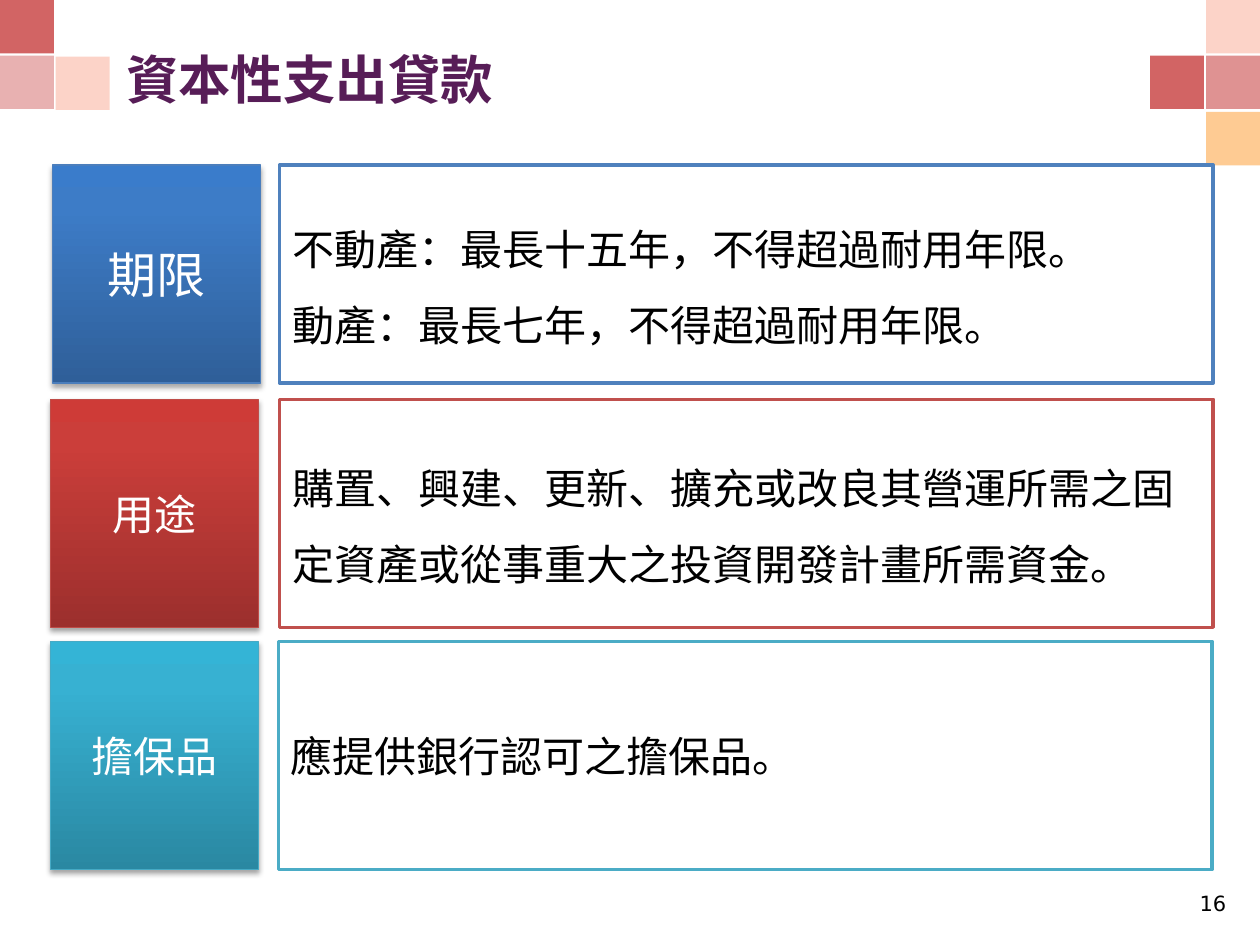
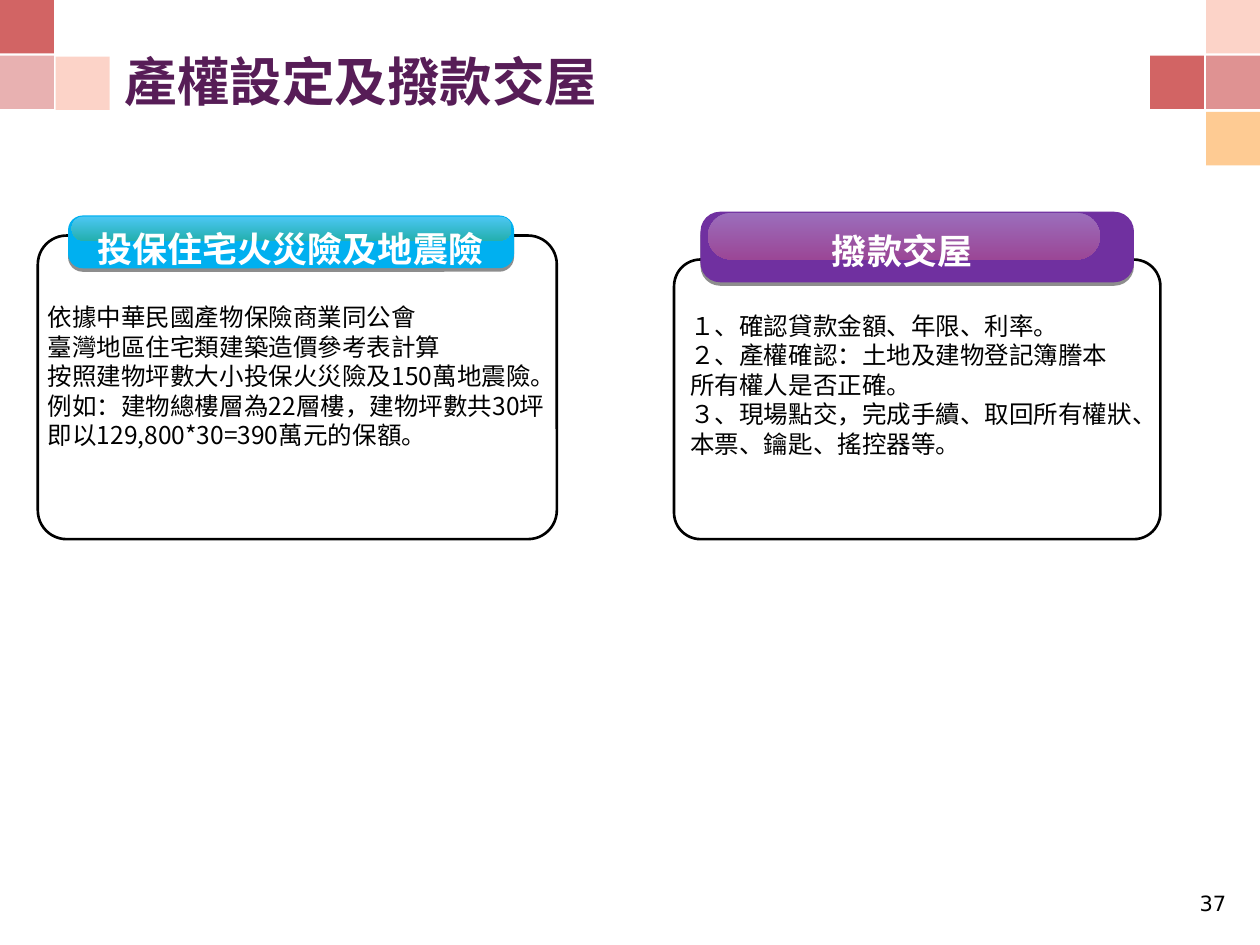
from lxml.etree import SubElement
from pptx import Presentation
from pptx.dml.color import RGBColor
from pptx.enum.shapes import MSO_SHAPE
from pptx.enum.text import MSO_ANCHOR, PP_ALIGN
from pptx.oxml.ns import qn
from pptx.util import Pt

CJK_FONT = "Noto Sans CJK SC"
NUMBER_FONT = "DejaVu Sans"
TITLE_COLOR, BLACK, WHITE = "571D57", "000000", "FFFFFF"
RED, PEACH, ORANGE = "D26464", "FBA993", "FEA94C"

# Corner squares: left, top, colour, opacity in percent
SQUARE_SIZE = (30.8, 30.5)
CORNER_SQUARES = [
    (689.2, 64, ORANGE, 60), (689.2, 0, PEACH, 50), (31.8, 32.4, PEACH, 50),
    (0, 0, RED, 100), (0, 31.8, RED, 50),
    (689.2, 31.8, RED, 70), (657.2, 31.8, RED, 100),
]
ROW_SHADOW = dict(color=BLACK, opacity=35, blur=3.1, distance=1.8)
BANNER_SHADOW = dict(color="1C1C1C", opacity=50, blur=0, distance=2)


def rgb(value):
    return RGBColor.from_string(value)


def add_color(parent, color, opacity):
    element = SubElement(parent, qn("a:srgbClr"), val=color)
    if opacity < 100:
        SubElement(element, qn("a:alpha"), val=str(opacity * 1000))


def fill_solid(shape, color, opacity=100):
    shape.fill.solid()
    shape.fill.fore_color.rgb = rgb(color)
    if opacity < 100:
        srgb = shape.element.spPr.find(".//" + qn("a:srgbClr"))
        SubElement(srgb, qn("a:alpha"), val=str(opacity * 1000))


def fill_gradient(shape, stops, angle, opacity=100):
    shape.fill.gradient()
    shape.fill.gradient_angle = angle
    stop_list = shape.element.spPr.find(".//" + qn("a:gsLst"))
    for stop in list(stop_list):
        stop_list.remove(stop)
    for position, color in stops:
        stop = SubElement(stop_list, qn("a:gs"), pos=str(position * 1000))
        add_color(stop, color, opacity)


def add_shadow(shape, color, opacity, blur, distance):
    effects = shape.element.spPr.find(qn("a:effectLst"))
    outer = SubElement(effects, qn("a:outerShdw"), blurRad=str(Pt(blur)),
                       dist=str(Pt(distance)), dir="5400000", rotWithShape="0")
    add_color(outer, color, opacity)


def add_box(shapes, box, line=None, width=1, corner=None):
    """Add a rectangle, rounded if a corner ratio is given."""
    kind = MSO_SHAPE.RECTANGLE if corner is None else MSO_SHAPE.ROUNDED_RECTANGLE
    shape = shapes.add_shape(kind, *map(Pt, box))
    shape.shadow.inherit = False
    if corner is not None:
        shape.adjustments[0] = corner
    if line:
        shape.line.color.rgb = rgb(line)
        shape.line.width = Pt(width)
    else:
        shape.line.fill.background()
    return shape


def write(shape, *lines, size, color=BLACK, bold=False, font=CJK_FONT,
          align=PP_ALIGN.LEFT, anchor=MSO_ANCHOR.TOP, spacing=None, wrap=True):
    frame = shape.text_frame
    frame.word_wrap = wrap
    frame.vertical_anchor = anchor
    frame.text = "\n".join(lines)
    for paragraph in frame.paragraphs:
        paragraph.alignment = align
        if spacing:
            paragraph.line_spacing = spacing
        for run in paragraph.runs:
            run.font.name = font
            run.font.size = Pt(size)
            run.font.bold = bold
            run.font.color.rgb = rgb(color)
            latin = run.font._element.find(qn("a:latin"))
            east_asian = SubElement(run.font._element, qn("a:ea"), typeface=font)
            latin.addnext(east_asian)


def add_text(shapes, box, *lines, **style):
    write(shapes.add_textbox(*map(Pt, box)), *lines, **style)


def add_slide(deck, title, title_left, title_top, number):
    slide = deck.slides.add_slide(deck.slide_layouts[5])
    # Corner decoration
    for left, top, color, opacity in CORNER_SQUARES:
        square = add_box(slide.shapes, (left, top, *SQUARE_SIZE))
        fill_solid(square, color, opacity)
    # Title and page number
    heading = slide.shapes.title
    heading.left, heading.top = Pt(title_left), Pt(title_top)
    heading.width, heading.height = Pt(583.2), Pt(44.6)
    write(heading, title, size=30, color=TITLE_COLOR, bold=True,
          anchor=MSO_ANCHOR.MIDDLE)
    add_text(slide.shapes, (671.8, 505.4, 36, 25.2), number, size=12,
             font=NUMBER_FONT, align=PP_ALIGN.RIGHT)
    return slide


def add_loan_row(slide, label, lines, top, height, label_left, detail_left,
                 gradient, label_line, detail_line, label_size=24, spacing=1.5):
    label_box = add_box(slide.shapes, (label_left, top, 118.8, height),
                        label_line, 0.75)
    fill_gradient(label_box, zip((0, 80, 100), gradient), 90)
    add_shadow(label_box, **ROW_SHADOW)
    write(label_box, label, size=label_size, color=WHITE,
          align=PP_ALIGN.CENTER, anchor=MSO_ANCHOR.MIDDLE)
    detail_box = add_box(slide.shapes, (detail_left, top, 533.5, height),
                         detail_line, 2)
    fill_solid(detail_box, WHITE)
    write(detail_box, *lines, size=24, anchor=MSO_ANCHOR.MIDDLE, spacing=spacing)


def add_card(slide, heading, lines, frame, banner, gloss, heading_box, body_box,
             color, gloss_end, wrap_heading=True):
    card = slide.shapes.add_group_shape().shapes
    fill_solid(add_box(card, frame, BLACK, 1.5, corner=0.095), WHITE)
    banner_shape = add_box(card, banner, corner=0.279)
    fill_solid(banner_shape, color)
    add_shadow(banner_shape, **BANNER_SHADOW)
    fill_gradient(add_box(card, gloss, corner=0.5),
                  [(0, WHITE), (100, gloss_end)], 270, opacity=30)
    add_text(card, heading_box, heading, size=20, color=WHITE, bold=True,
             align=PP_ALIGN.CENTER, wrap=wrap_heading)
    add_text(card, body_box, *lines, size=14)


def add_capital_loan_slide(deck):
    slide = add_slide(deck, "資本性支出貸款", 64.8, 22.3, "16")
    add_loan_row(slide, "期限",
                 ["不動產：最長十五年，不得超過耐用年限。",
                  "動產：最長七年，不得超過耐用年限。"],
                 94.3, 124.6, 30.2, 159.8, ("2F5F99", "3D7CC7", "3A7CCB"),
                 "4B7EBC", "4F81BD", label_size=28)
    add_loan_row(slide, "擔保品", ["應提供銀行認可之擔保品。"],
                 366.5, 130.3, 28.8, 159.1, ("2A88A2", "37B1D2", "34B4D6"),
                 "46AAC5", "4BACC6", spacing=None)
    add_loan_row(slide, "用途",
                 ["購置、興建、更新、擴充或改良其營運所需之固定資產"
                  "或從事重大之投資開發計畫所需資金。"],
                 228.2, 130.3, 28.8, 159.8, ("9C2F2D", "CB3E3A", "CE3B37"),
                 "BF4C48", "C0504D")


def add_handover_slide(deck):
    slide = add_slide(deck, "產權設定及撥款交屋", 64.1, 23.8, "37")
    add_card(slide, "投保住宅火災險及地震險",
             ["依據中華民國產物保險商業同公會",
              "臺灣地區住宅類建築造價參考表計算",
              "按照建物坪數大小投保火災險及150萬地震險。",
              "例如：建物總樓層為22層樓，建物坪數共30坪",
              "即以129,800*30=390萬元的保額。"],
             frame=(21.6, 134.6, 296.6, 173.5), banner=(38.9, 123.1, 254.9, 30.2),
             gloss=(41, 123.8, 251.3, 13.7), heading_box=(47.5, 126.7, 236.9, 31.7),
             body_box=(20.2, 169.2, 298.1, 113.8),
             color="00B0F0", gloss_end="7BB11B", wrap_heading=False)
    add_card(slide, "撥款交屋",
             ["１、確認貸款金額、年限、利率。",
              "２、產權確認：土地及建物登記簿謄本",
              "所有權人是否正確。",
              "３、現場點交，完成手續、取回所有權狀、本票、鑰匙、搖控器等。"],
             frame=(385.2, 148.3, 277.9, 159.8), banner=(400.3, 121, 247.7, 40.3),
             gloss=(404.6, 121.7, 223.9, 26.6), heading_box=(377.3, 127.4, 276.5, 31.7),
             body_box=(387.4, 174.2, 275.8, 92.2),
             color="7030A0", gloss_end="FF7C80")


def main():
    deck = Presentation()
    deck.slide_width, deck.slide_height = Pt(720), Pt(540)
    add_capital_loan_slide(deck)
    add_handover_slide(deck)
    deck.save("out.pptx")


if __name__ == "__main__":
    main()
